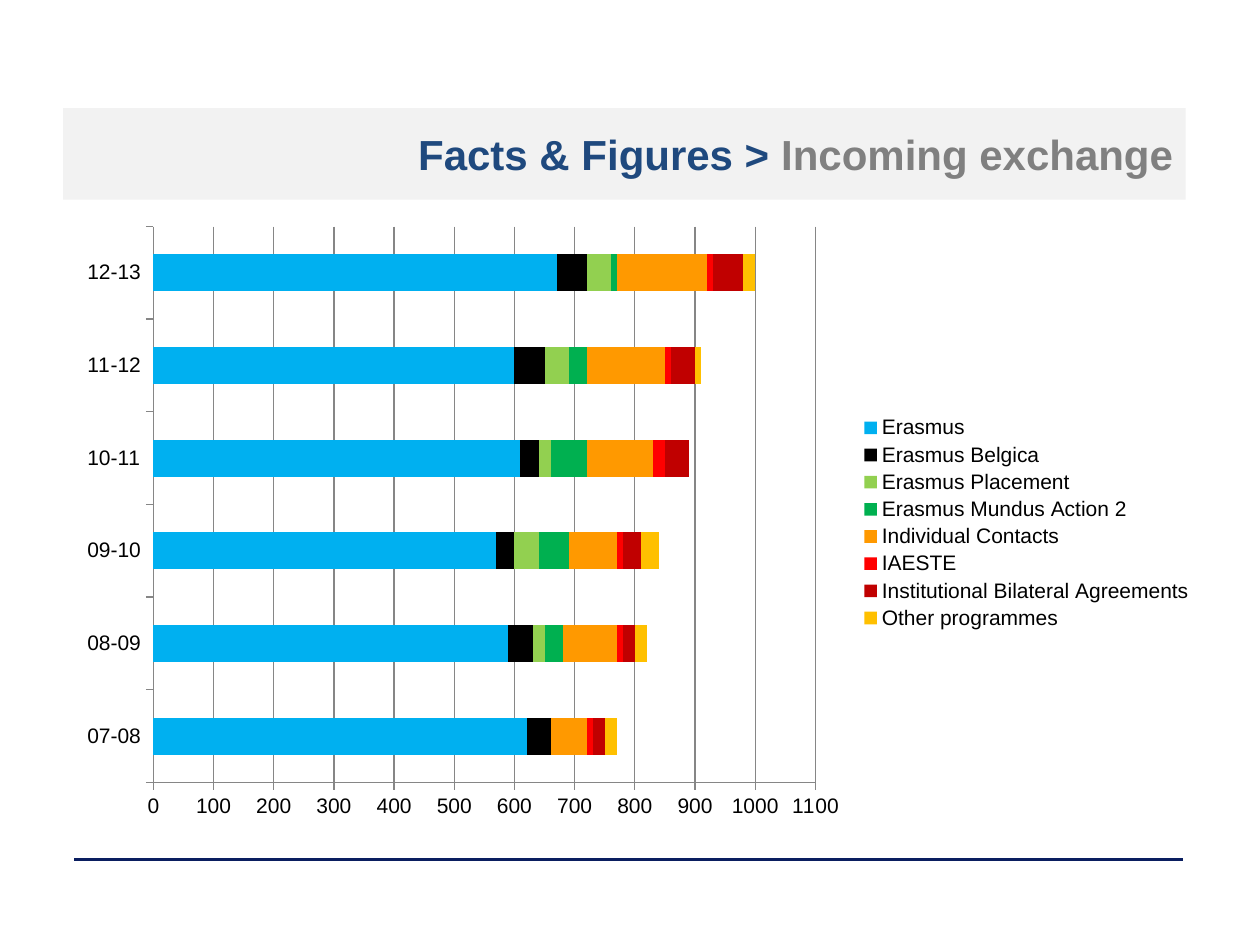
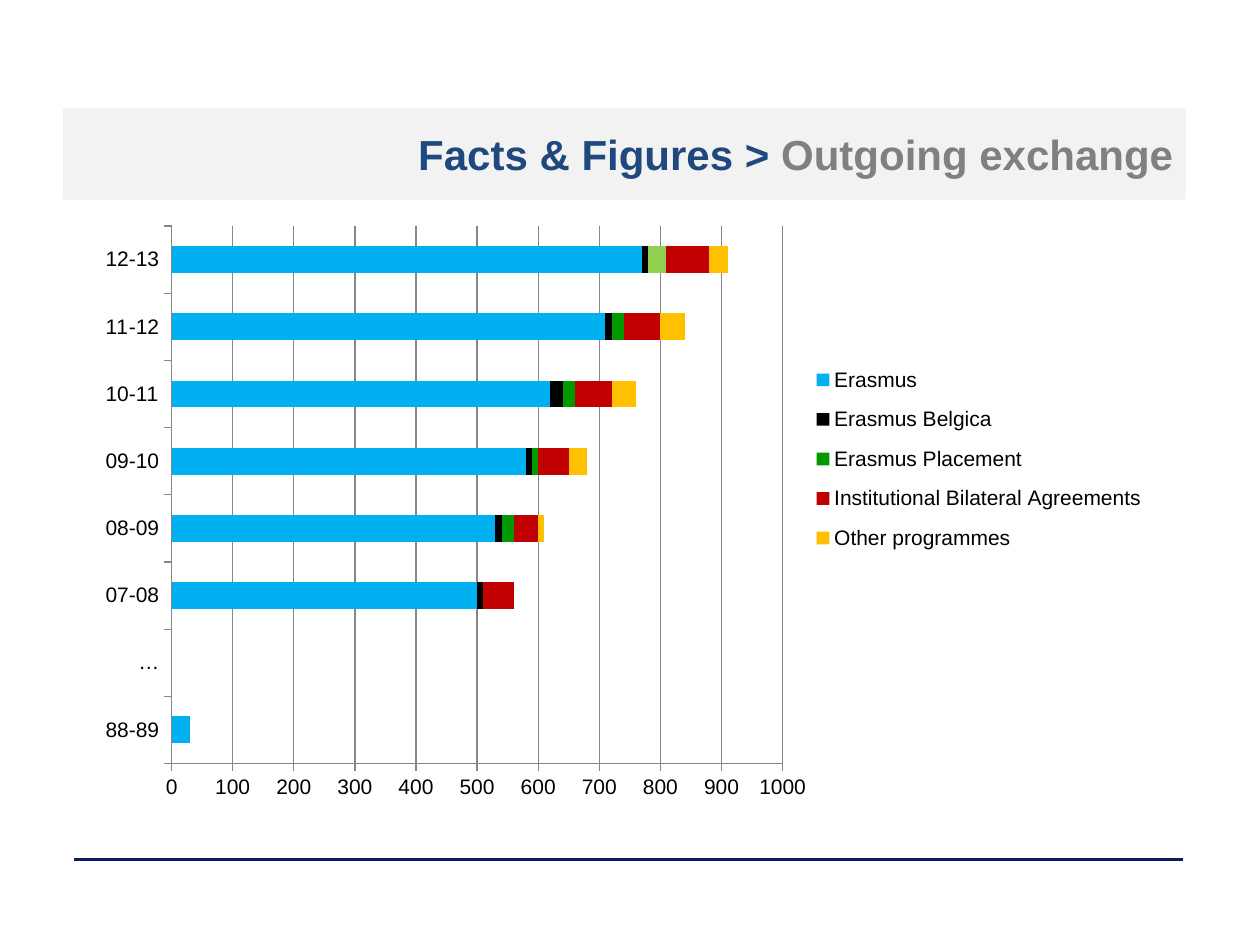
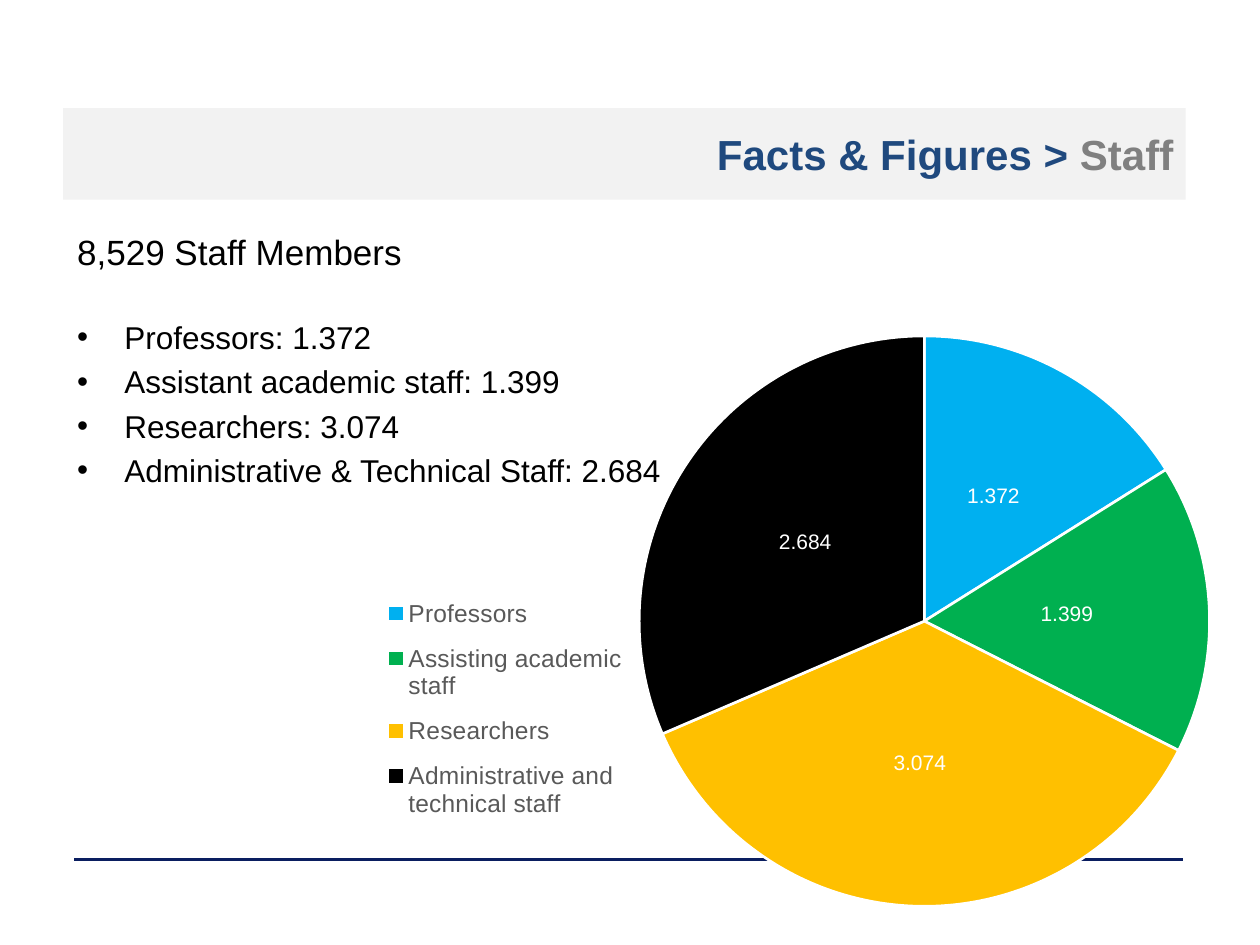
from lxml import etree
from pptx import Presentation
from pptx.chart.data import CategoryChartData
from pptx.dml.color import RGBColor
from pptx.enum.chart import XL_CHART_TYPE, XL_LABEL_POSITION, XL_LEGEND_POSITION, XL_TICK_MARK
from pptx.enum.shapes import MSO_CONNECTOR, MSO_SHAPE
from pptx.enum.text import MSO_ANCHOR, PP_ALIGN
from pptx.oxml import parse_xml
from pptx.oxml.ns import nsdecls, qn
from pptx.util import Pt

BAR_STACKED, PIE = XL_CHART_TYPE.BAR_STACKED, XL_CHART_TYPE.PIE
LEGEND_LEFT, LEGEND_RIGHT = XL_LEGEND_POSITION.LEFT, XL_LEGEND_POSITION.RIGHT
LABEL_CENTER = XL_LABEL_POSITION.CENTER
TICK_OUTSIDE = XL_TICK_MARK.OUTSIDE
STRAIGHT = MSO_CONNECTOR.STRAIGHT
BAND_SHAPE = MSO_SHAPE.ROUND_2_DIAG_RECTANGLE
MIDDLE, RIGHT = MSO_ANCHOR.MIDDLE, PP_ALIGN.RIGHT

FONT = "Arial"
NAVY, BLUE, GREY, BAND = "0A1E60", "1F497E", "808080", "F2F2F2"
BLACK, WHITE, LEGEND_GREY, AXIS_GREY = "000000", "FFFFFF", "595959", "868686"
SKY, LIME, GREEN, LEAF = "00B0F0", "92D050", "00B050", "009900"
ORANGE, RED, DARK_RED, GOLD = "FF9900", "FF0000", "C00000", "FFC000"

# Boxes are left, top, width, height in points; the plot and legend
# boxes are fractions of the chart.
BAR_SLIDES = [
    {
        "topic": "Incoming exchange",
        "box": (35.5, 122.4, 652.3, 353),
        "plot": (0.08, 0.02, 0.58, 0.9),
        "legend": (0.69, 0.32, 0.31, 0.36),
        "maximum": 1100,
        "years": ["07-08", "08-09", "09-10", "10-11", "11-12", "12-13"],
        "programmes": [
            ("Erasmus", SKY, (620, 590, 570, 610, 600, 670)),
            ("Erasmus Belgica", BLACK, (40, 40, 30, 30, 50, 50)),
            ("Erasmus Placement", LIME, (0, 20, 40, 20, 40, 40)),
            ("Erasmus Mundus Action 2", GREEN, (0, 30, 50, 60, 30, 10)),
            ("Individual Contacts", ORANGE, (60, 90, 80, 110, 130, 150)),
            ("IAESTE", RED, (10, 10, 10, 20, 10, 10)),
            ("Institutional Bilateral Agreements", DARK_RED, (20, 20, 30, 40, 40, 50)),
            ("Other programmes", GOLD, (20, 20, 30, 0, 10, 20)),
        ],
        "point_colors": {},
    },
    {
        "topic": "Outgoing exchange",
        "box": (48.2, 122.4, 623.5, 341.3),
        "plot": (0.08, 0.02, 0.56, 0.9),
        "legend": (0.66, 0.23, 0.32, 0.36),
        "maximum": 1000,
        "years": ["88-89", "…", "07-08", "08-09", "09-10", "10-11", "11-12", "12-13"],
        "programmes": [
            ("Erasmus", SKY, (30, None, 500, 530, 580, 620, 710, 770)),
            ("Erasmus Belgica", BLACK, (None, None, 10, 10, 10, 20, 10, 10)),
            ("Erasmus Placement", LEAF, (None, None, None, 20, 10, 20, 20, 30)),
            ("Institutional Bilateral Agreements", DARK_RED,
             (None, None, 50, 40, 50, 60, 60, 70)),
            ("Other programmes", GOLD, (0, None, 0, 10, 30, 40, 40, 30)),
        ],
        "point_colors": {("Erasmus Placement", 7): LIME},
    },
]
STAFF_HEADING = "8,529 Staff Members"
STAFF_LINES = [
    "Professors: 1.372",
    "Assistant academic staff: 1.399",
    "Researchers: 3.074",
    "Administrative & Technical Staff: 2.684",
]
STAFF_SLICES = [
    ("Professors", SKY, 1.372),
    ("Assisting academic staff", GREEN, 1.399),
    ("Researchers", GOLD, 3.074),
    ("Administrative and technical staff", BLACK, 2.684),
]
STAFF_CHART = {
    "box": (207.2, 169.6, 493.9, 370.8),
    "plot": (0.32, 0.06, 0.66, 0.88),
    "legend": (0.02, 0.44, 0.29, 0.39),
}


def rgb(color):
    return RGBColor.from_string(color)


def points(box):
    return [Pt(length) for length in box]


def paint(target, color):
    target.fill.solid()
    target.fill.fore_color.rgb = rgb(color)


def set_font(font, size, color, bold=False):
    for name, value in {"name": FONT, "size": Pt(size), "bold": bold}.items():
        setattr(font, name, value)
    font.color.rgb = rgb(color)


def add_span(para, text, size, color, bold=False):
    span = para.add_run()
    span.text = text
    set_font(span.font, size, color, bold)


def add_page(deck, topic):
    """Add a slide with the footer line and the title band."""
    page = deck.slides.add_slide(deck.slide_layouts[6])
    footer = page.shapes.add_connector(STRAIGHT, Pt(42.5), Pt(491), Pt(676), Pt(491))
    footer.line.color.rgb = rgb(NAVY)
    footer.line.width = Pt(1.5)
    etree.SubElement(footer._element.spPr, qn("a:effectLst"))

    band = page.shapes.add_shape(BAND_SHAPE, *points((36, 61.8, 641.5, 52.3)))
    band.adjustments[0] = band.adjustments[1] = 0
    band.shadow.inherit = False
    paint(band, BAND)
    band.line.fill.background()
    band.text_frame.vertical_anchor = MIDDLE
    para = band.text_frame.paragraphs[0]
    para.alignment = RIGHT
    add_span(para, "Facts & Figures > ", 24, BLUE, True)
    add_span(para, topic, 24, GREY, True)
    return page


def layout_xml(box, inner=False):
    target = '<c:layoutTarget val="inner"/>' if inner else ""
    modes = "".join(f'<c:{side}Mode val="edge"/>' for side in "xy")
    sizes = "".join(f'<c:{side} val="{size}"/>' for side, size in zip("xywh", box))
    return parse_xml(f'<c:layout {nsdecls("c")}><c:manualLayout>{target}{modes}{sizes}'
                     "</c:manualLayout></c:layout>")


def add_chart(page, kind, data, places, legend_side, legend_size, legend_color):
    """Add a clear chart whose plot and legend stand at set places."""
    chart = page.shapes.add_chart(kind, *points(places["box"]), data).chart
    chart.has_title = False
    set_font(chart.font, 12, BLACK)
    chart.has_legend = True
    chart.legend.position = legend_side
    chart.legend.include_in_layout = False
    set_font(chart.legend.font, legend_size, legend_color)

    space = chart._chartSpace
    for layout in space.xpath("c:chart/c:plotArea/c:layout | c:chart/c:legend/c:layout"):
        layout.getparent().remove(layout)
    space.xpath("c:chart/c:plotArea")[0].insert(0, layout_xml(places["plot"], True))
    space.xpath("c:chart/c:legend/c:legendPos")[0].addnext(layout_xml(places["legend"]))
    space.xpath("c:chart")[0].addnext(parse_xml(
        f'<c:spPr {nsdecls("c", "a")}><a:noFill/><a:ln><a:noFill/></a:ln></c:spPr>'))
    return chart


def style_axis(axis):
    axis.major_tick_mark = TICK_OUTSIDE
    set_font(axis.tick_labels.font, 12, BLACK)
    axis.format.line.color.rgb = rgb(AXIS_GREY)
    axis.format.line.width = Pt(0.75)


def add_bar_slide(deck, content):
    page = add_page(deck, content["topic"])
    data = CategoryChartData()
    data.categories = content["years"]
    for name, _, students in content["programmes"]:
        data.add_series(name, students)
    chart = add_chart(page, BAR_STACKED, data, content, LEGEND_RIGHT, 12, BLACK)

    style_axis(chart.category_axis)
    chart.category_axis.has_major_gridlines = False
    values = chart.value_axis
    style_axis(values)
    values.minimum_scale, values.maximum_scale = 0, content["maximum"]
    values.major_unit = 100
    values.has_major_gridlines = True
    values.major_gridlines.format.line.color.rgb = rgb(AXIS_GREY)
    values.major_gridlines.format.line.width = Pt(0.75)

    plot = chart.plots[0]
    plot.vary_by_categories = False
    plot.gap_width, plot.overlap = 150, 100
    for series, (_, color, _) in zip(plot.series, content["programmes"]):
        paint(series.format, color)
        series.invert_if_negative = False
    series_by_name = {series.name: series for series in plot.series}
    for (name, index), color in content["point_colors"].items():
        paint(series_by_name[name].points[index].format, color)


def add_staff_text(page):
    frame = page.shapes.add_textbox(*points((37, 128.2, 639.4, 351.4))).text_frame
    frame.word_wrap = True
    add_span(frame.paragraphs[0], STAFF_HEADING, 20, BLACK)
    for index, line in enumerate(STAFF_LINES):
        para = frame.add_paragraph()
        para.space_before = Pt(3.7 if index else 26)
        properties = para._p.get_or_add_pPr()
        properties.set("marL", str(Pt(27)))
        properties.set("indent", str(-Pt(27)))
        etree.SubElement(properties, qn("a:buFont"), typeface=FONT)
        etree.SubElement(properties, qn("a:buChar"), char="•")
        add_span(para, line, 18, BLACK)


def add_staff_slide(deck):
    page = add_page(deck, "Staff")
    add_staff_text(page)
    names, colors, counts = zip(*STAFF_SLICES)
    data = CategoryChartData(number_format="0.000")
    data.categories = names
    data.add_series("Series 1", counts)
    chart = add_chart(page, PIE, data, STAFF_CHART, LEGEND_LEFT, 14, LEGEND_GREY)

    plot = chart.plots[0]
    plot.vary_by_categories = True
    for index, color in enumerate(colors):
        piece = plot.series[0].points[index].format
        paint(piece, color)
        piece.line.color.rgb = rgb(WHITE)
        piece.line.width = Pt(1.5)
    plot.has_data_labels = True
    labels = plot.data_labels
    for name, value in {"show_value": True, "show_percentage": False,
                        "number_format": "0.000", "number_format_is_linked": False,
                        "position": LABEL_CENTER}.items():
        setattr(labels, name, value)
    set_font(labels.font, 12, WHITE)


def main():
    deck = Presentation()
    deck.slide_width, deck.slide_height = Pt(720), Pt(540)
    for content in BAR_SLIDES:
        add_bar_slide(deck, content)
    add_staff_slide(deck)
    deck.save("out.pptx")


if __name__ == "__main__":
    main()
